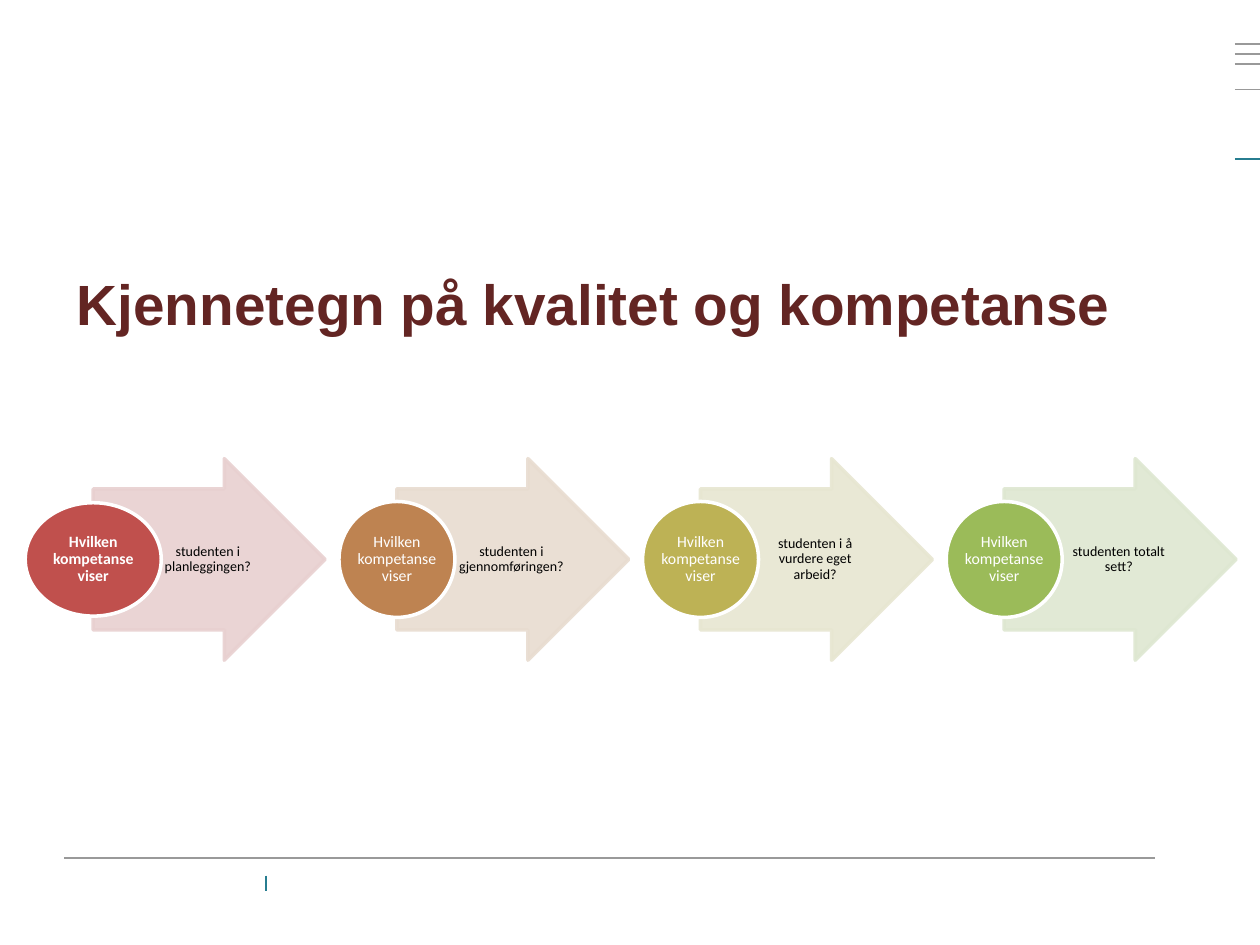
from dataclasses import dataclass

from lxml import etree
from pptx import Presentation
from pptx.dml.color import RGBColor
from pptx.enum.shapes import MSO_CONNECTOR, MSO_SHAPE
from pptx.enum.text import MSO_ANCHOR, MSO_AUTO_SIZE, PP_ALIGN
from pptx.oxml.ns import qn
from pptx.util import Inches, Pt

ARROW, OVAL = MSO_SHAPE.RIGHT_ARROW, MSO_SHAPE.OVAL
STRAIGHT = MSO_CONNECTOR.STRAIGHT
TOP, MIDDLE = MSO_ANCHOR.TOP, MSO_ANCHOR.MIDDLE
CENTER = PP_ALIGN.CENTER
NO_AUTOSIZE = MSO_AUTO_SIZE.NONE


@dataclass(frozen=True)
class Theme:
    title_font: str = "Arial"
    body_font: str = "Calibri"
    title_size: float = 32.4
    step_size: float = 9
    detail_size: float = 8
    title: str = "632523"
    dark: str = "000000"
    light: str = "FFFFFF"
    rule: str = "999999"
    accent: str = "277D90"


class SlideBuilder:
    def __init__(self, slide, theme):
        self.slide = slide
        self.theme = theme

    def set_text(self, tf, text, font, size, color, bold=False, anchor=MIDDLE,
                 insets=(0, 0, 0, 0)):
        """Fill a text frame with one centred paragraph; insets are l, t, r, b."""
        tf.text = text
        tf.word_wrap = True
        tf.auto_size = NO_AUTOSIZE
        tf.vertical_anchor = anchor
        (tf.margin_left, tf.margin_top,
         tf.margin_right, tf.margin_bottom) = map(Inches, insets)
        p = tf.paragraphs[0]
        p.alignment = CENTER
        for r in p.runs:
            r.font.name = font
            r.font.size = Pt(size)
            r.font.bold = bold
            r.font.color.rgb = RGBColor.from_string(color)
        return p

    def title(self, text, x, y, w, h):
        s = self.slide.shapes.title
        s.left, s.top, s.width, s.height = map(Inches, (x, y, w, h))
        t = self.theme
        self.set_text(s.text_frame, text, t.title_font, t.title_size, t.title,
                      bold=True, anchor=TOP, insets=(0, 0.58, 0.26, 0))

    def line(self, x1, y1, x2, y2, color):
        s = self.slide.shapes.add_connector(
            STRAIGHT, *map(Inches, (x1, y1, x2, y2)))
        s.line.color.rgb = RGBColor.from_string(color)
        s.line.width = Pt(1)
        etree.SubElement(s._element.spPr, qn("a:effectLst"))

    def shape(self, kind, x, y, w, h, fill, outline):
        s = self.slide.shapes.add_shape(kind, *map(Inches, (x, y, w, h)))
        s.shadow.inherit = False
        s.fill.solid()
        s.fill.fore_color.rgb = RGBColor.from_string(fill)
        s.line.color.rgb = RGBColor.from_string(outline)
        s.line.width = Pt(2)
        return s

    def arrow(self, x, y, w, h, color, opacity=90):
        s = self.shape(ARROW, x, y, w, h, color, color)
        s.adjustments[0], s.adjustments[1] = 0.7, 0.5
        for clr in s._element.spPr.iter(qn("a:srgbClr")):
            etree.SubElement(clr, qn("a:alpha")).set("val", str(opacity * 1000))

    def oval(self, cx, cy, w, h, color, text, bold):
        t = self.theme
        s = self.shape(OVAL, cx - w / 2, cy - h / 2, w, h, color, t.light)
        p = self.set_text(s.text_frame, text, t.body_font, t.step_size, t.light, bold)
        p.line_spacing = 0.9

    def label(self, text, x, y, w, h):
        t = self.theme
        s = self.slide.shapes.add_textbox(*map(Inches, (x, y, w, h)))
        p = self.set_text(s.text_frame, text, t.body_font, t.detail_size, t.dark,
                          insets=(0.02, 0.01, 0.01, 0.01))
        p.line_spacing = 0.9


STEPS = [  # detail, arrow colour, oval colour
    ("studenten i planleggingen?", "E8D0D0", "C0504D"),
    ("studenten i gjennomføringen?", "E8DCD0", "BE8351"),
    ("studenten i å vurdere eget arbeid?", "E7E6D1", "BDB255"),
    ("studenten totalt sett?", "DEE7D1", "9BBB59"),
]
STEP_LEFT, STEP_PITCH, STEP_MIDDLE = 0.74, 2.41, 4.44


def main():
    prs = Presentation()
    prs.slide_width, prs.slide_height = Inches(10), Inches(7.5)
    theme = Theme()
    page = SlideBuilder(prs.slides.add_slide(prs.slide_layouts[5]), theme)

    page.line(0.51, 6.81, 9.17, 6.81, theme.rule)
    page.line(2.11, 6.95, 2.11, 7.07, theme.accent)
    for y in (0.35, 0.43, 0.51, 0.71):
        page.line(9.8, y, 10, y, theme.rule)
    page.line(9.8, 1.26, 10, 1.26, theme.accent)

    page.title("Kjennetegn på kvalitet og kompetanse", 0.51, 1.55, 8.66, 1.02)

    for i, (detail, arrow_color, oval_color) in enumerate(STEPS):
        x = STEP_LEFT + i * STEP_PITCH
        first = i == 0
        oval_w, oval_h = (1.08, 0.9) if first else (0.92, 0.92)
        page.arrow(x, STEP_MIDDLE - 0.8, 1.84, 1.6, arrow_color)
        page.label(detail, x + 0.46, STEP_MIDDLE - 0.56, 0.89, 1.12)
        page.oval(x, STEP_MIDDLE, oval_w, oval_h, oval_color,
                  "Hvilken kompetanse viser", bold=first)

    prs.save("out.pptx")


if __name__ == "__main__":
    main()
